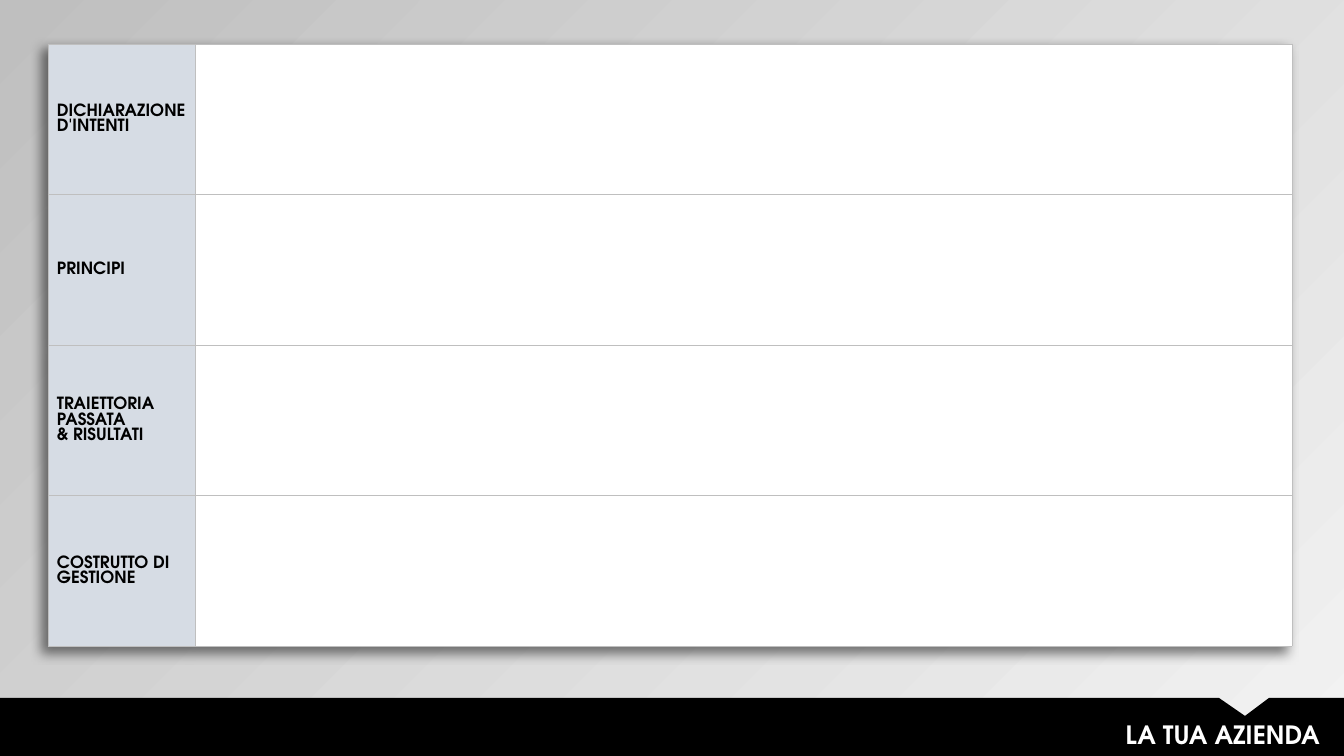
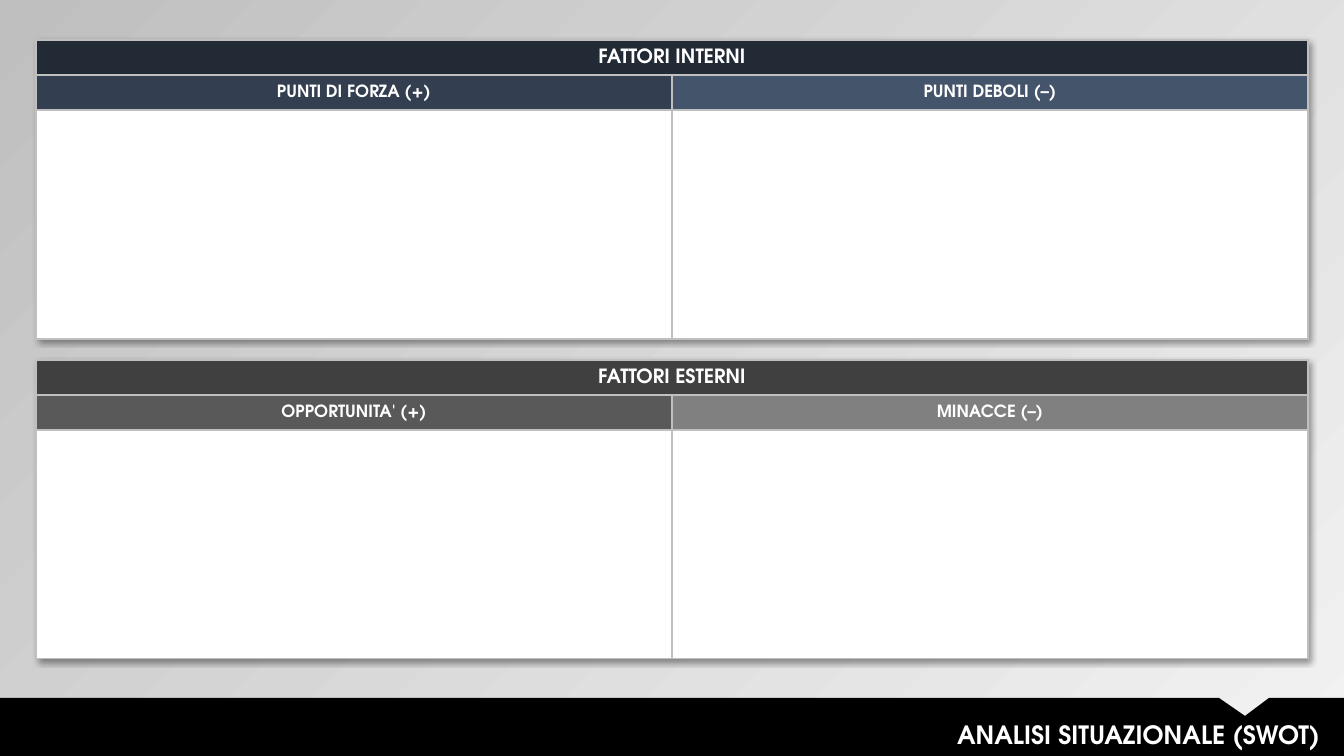
"""Build two company planning slides: a profile table and a SWOT analysis."""
from lxml.etree import SubElement
from pptx import Presentation
from pptx.dml.color import RGBColor
from pptx.enum.text import MSO_ANCHOR as Anchor, MSO_AUTO_SIZE as AutoSize, PP_ALIGN as Align
from pptx.oxml import parse_xml
from pptx.oxml.ns import nsdecls, qn
from pptx.util import Pt

SCALE = 914400 / 100.8
FONT = "TeX Gyre Adventor"
COLORS = {
    "black": "000000", "white": "FFFFFF", "border": "BFBFBF", "light": "F2F2F2",
    "label": "D6DCE4", "navy": "222A35", "slate": "333F50", "steel": "44546A",
    "charcoal": "404040", "graphite": "595959", "gray": "808080",
}


def px(length):
    return round(length * SCALE)


def add_grid(slide, box, row_heights, column_count_widths, cells, style):
    shape = slide.shapes.add_table(len(row_heights), len(column_count_widths), *map(px, box))
    table = shape.table
    table.first_row = table.horz_banding = False
    for row, height in zip(table.rows, row_heights):
        row.height = px(height)
    for column, width in zip(table.columns, column_count_widths):
        column.width = px(width)
    table._tbl.tblPr.insert(0, parse_xml(
        f'<a:effectLst {nsdecls("a")}><a:outerShdw blurRad="{px(style["blur"])}" '
        f'dist="{px(style["distance"])}" dir="{style["direction"] * 60000}" algn="ctr" rotWithShape="0">'
        f'<a:srgbClr val="{COLORS["black"]}"><a:alpha val="{style["alpha"] * 1000}"/></a:srgbClr>'
        '</a:outerShdw></a:effectLst>'))
    for row_index, row_cells in enumerate(cells):
        for column_index, (text, fill, size) in enumerate(row_cells):
            cell = table.cell(row_index, column_index)
            cell.fill.solid()
            cell.fill.fore_color.rgb = RGBColor.from_string(COLORS[fill])
            properties = cell._tc.get_or_add_tcPr()
            for index, side in enumerate(("lnL", "lnR", "lnT", "lnB")):
                line = parse_xml(f'<a:{side} {nsdecls("a")} w="{Pt(style["border"])}"/>')
                solid = SubElement(line, qn("a:solidFill"))
                SubElement(solid, qn("a:srgbClr"), val=COLORS["border"])
                properties.insert(index, line)
            if not text:
                continue
            for name, value in {
                "text": text, "vertical_anchor": Anchor.MIDDLE, "margin_left": px(style["inset"]),
                "margin_right": px(1), "margin_top": px(1), "margin_bottom": 0,
            }.items():
                setattr(cell, name, value)
            for paragraph in cell.text_frame.paragraphs:
                paragraph.alignment = style["align"]
                paragraph.line_spacing = style["spacing"]
                for name, value in {"name": FONT, "size": Pt(size), "bold": True}.items():
                    setattr(paragraph.font, name, value)
                paragraph.font.color.rgb = RGBColor.from_string(COLORS[style["color"]])
    return table


presentation = Presentation()
presentation.slide_width, presentation.slide_height = px(1344), px(756)
layout = presentation.slide_layouts[5]

background = layout.background.fill
background.gradient()
background.gradient_angle = 135
for stop, (position, color) in zip(background.gradient_stops, ((0, "light"), (1, "border"))):
    stop.position = position
    stop.color.rgb = RGBColor.from_string(COLORS[color])

slides = []
for heading in ("LA TUA AZIENDA", "ANALISI SITUAZIONALE (SWOT)"):
    slide = presentation.slides.add_slide(layout)
    slides.append(slide)

    builder = slide.shapes.build_freeform(0, 698, scale=SCALE)
    builder.add_line_segments(
        [(1219, 698), (1245, 716), (1269, 698), (1344, 698), (1344, 756), (0, 756)], close=True)
    band = builder.convert_to_shape()
    band.shadow.inherit = False
    band.fill.solid()
    band.fill.fore_color.rgb = RGBColor.from_string(COLORS["black"])
    band.line.fill.background()

    title = slide.shapes.title
    band.element.addnext(title.element)
    for name, value in {"left": 417, "top": 714, "width": 913, "height": 40}.items():
        setattr(title, name, px(value))
    frame = title.text_frame
    for name, value in {
        "text": heading, "word_wrap": True, "auto_size": AutoSize.NONE, "vertical_anchor": Anchor.MIDDLE,
    }.items():
        setattr(frame, name, value)
    paragraph = frame.paragraphs[0]
    paragraph.alignment = Align.RIGHT
    for name, value in {"name": FONT, "size": Pt(18), "bold": True}.items():
        setattr(paragraph.font, name, value)
    paragraph.font.color.rgb = RGBColor.from_string(COLORS["white"])

company_slide, swot_slide = slides
blank = ("", "white", 12)

labels = ("DICHIARAZIONE D'INTENTI", "PRINCIPI", "TRAIETTORIA PASSATA\n& RISULTATI", "COSTRUTTO DI GESTIONE")
company_style = {
    "border": 0.5, "inset": 9, "align": Align.LEFT, "spacing": Pt(11), "color": "black",
    "blur": 12, "distance": 8, "direction": 135, "alpha": 50,
}
add_grid(company_slide, (48, 44, 1244, 602), [602 / len(labels)] * len(labels), (147, 1097),
         [[(label, "label", 12), blank] for label in labels], company_style)

swot_style = {
    "border": 1, "inset": 1, "align": Align.CENTER, "spacing": 1.0, "color": "white",
    "blur": 5, "distance": 4, "direction": 45, "alpha": 40,
}
factors = (
    (("FATTORI INTERNI", "navy"), ("PUNTI DI FORZA (+)", "slate"), ("PUNTI DEBOLI (–)", "steel")),
    (("FATTORI ESTERNI", "charcoal"), ("OPPORTUNITA' (+)", "graphite"), ("MINACCE (–)", "gray")),
)
for index, (header, favourable, adverse) in enumerate(factors):
    cells = [[(*header, 14), ("", header[1], 14)], [(*favourable, 12), (*adverse, 12)], [blank, blank]]
    table = add_grid(swot_slide, (36, 40 + 320 * index, 1272, 299), (35, 35, 229), (636, 636),
                     cells, swot_style)
    table.cell(0, 0).merge(table.cell(0, 1))

presentation.save("out.pptx")
